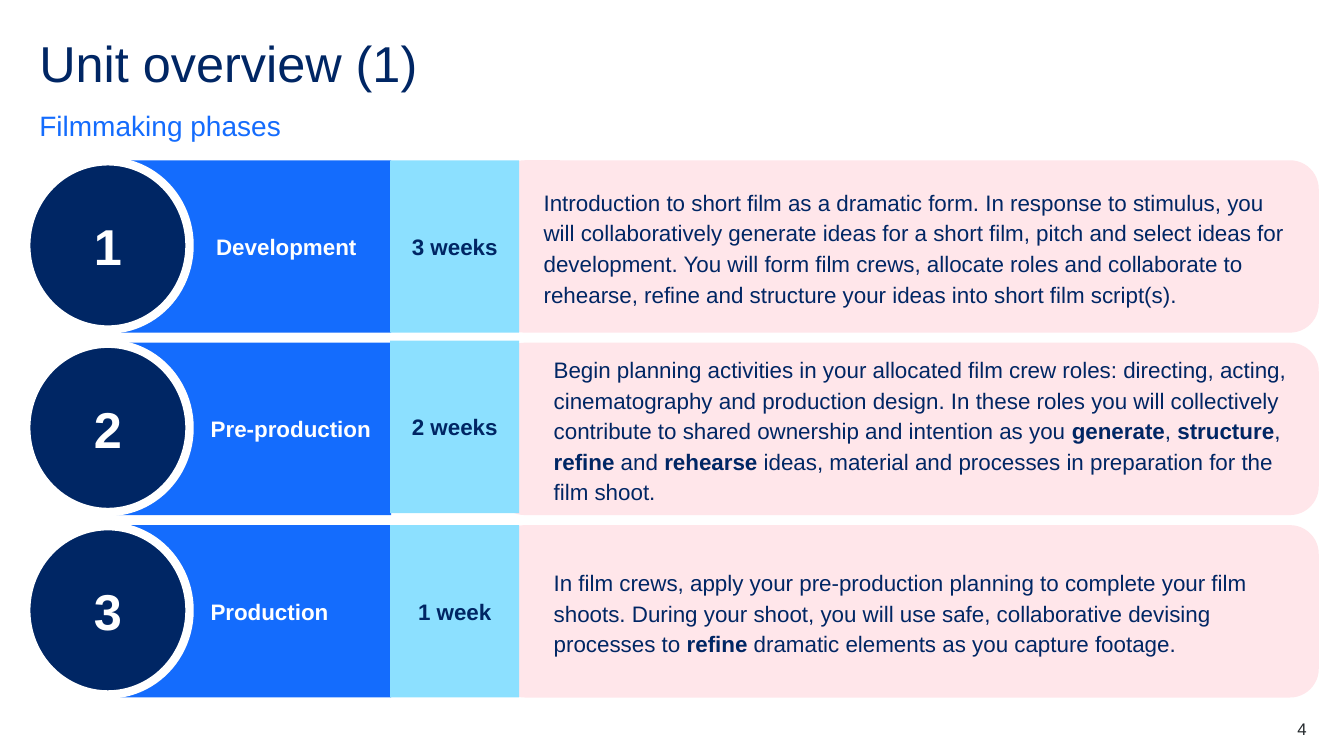
import pptx
import pptx.util
import pptx.dml.color
import pptx.enum.shapes
import pptx.enum.text

RGB = pptx.dml.color.RGBColor
NAVY = RGB(0x00, 0x26, 0x64)
BLUE = RGB(0x14, 0x6C, 0xFD)
SKY = RGB(0x8C, 0xE0, 0xFF)
PINK = RGB(0xFF, 0xE6, 0xEA)
WHITE = RGB(0xFF, 0xFF, 0xFF)
INK = RGB(0x22, 0x27, 0x2B)

SHAPE = pptx.enum.shapes.MSO_SHAPE
ALIGN = pptx.enum.text.PP_ALIGN
ANCHOR = pptx.enum.text.MSO_ANCHOR
PX = 9144  # 100 px to the inch

# number, phase, phase alignment, phase indent, time, time shift, text indent, text
# (words between asterisks are bold)
PHASES = [
    ("1", "Development", ALIGN.CENTER, 69, "3 weeks", 0, 29,
     "Introduction to short film as a dramatic form. In response to stimulus, "
     "you will collaboratively generate ideas for a short film, pitch and "
     "select ideas for development. You will form film crews, allocate roles "
     "and collaborate to rehearse, refine and structure your ideas into short "
     "film script(s)."),
    ("2", "Pre-production", ALIGN.CENTER, 78, "2 weeks", -2, 39,
     "Begin planning activities in your allocated film crew roles: directing, "
     "acting, cinematography and production design. In these roles you will "
     "collectively contribute to shared ownership and intention as you "
     "*generate*, *structure*, *refine* and *rehearse* ideas, material and "
     "processes in preparation for the film shoot."),
    ("3", "Production", ALIGN.LEFT, 88, "1 week", 0, 39,
     "In film crews, apply your pre-production planning to complete your film "
     "shoots. During your shoot, you will use safe, collaborative devising "
     "processes to *refine* dramatic elements as you capture footage."),
]


def px(*nums):
    return [pptx.util.Emu(n * PX) for n in nums]


def write(shape, text, size=16, color=NAVY, bold=False, align=ALIGN.LEFT,
          anchor=ANCHOR.MIDDLE, indent=0, line=None, after=0, inset=None):
    frame = shape.text_frame
    frame.word_wrap = True
    frame.vertical_anchor = anchor
    if inset is not None:
        frame.margin_left = frame.margin_right = inset
        frame.margin_top = frame.margin_bottom = inset
    para = frame.paragraphs[0]
    para.alignment = align
    para.space_after = pptx.util.Pt(after)
    if line:
        para.line_spacing = line
    if indent:
        props = para._p.get_or_add_pPr()
        props.set("marL", str(indent * PX))
        props.set("indent", "0")
    for i, part in enumerate(text.split("*")):
        run = para.add_run()
        run.text = part
        run.font.name = "Arial"
        run.font.size = pptx.util.Pt(size)
        run.font.bold = bold or i % 2 == 1
        run.font.color.rgb = color


def label(slide, box, text, **style):
    write(slide.shapes.add_textbox(*px(*box)), text, inset=0, **style)


def block(group, kind, box, fill, text, edge=None, **style):
    shape = group.shapes.add_shape(kind, *px(*box))
    shape.shadow.inherit = False
    shape.fill.solid()
    shape.fill.fore_color.rgb = fill
    if edge:
        shape.line.color.rgb = edge
        shape.line.width = pptx.util.Pt(6)
    else:
        shape.line.fill.background()
    write(shape, text, **style)


def header(slide, x, y, w):
    label(slide, (x, y, w, 60), "Unit overview (1)", size=36,
          anchor=ANCHOR.TOP, line=0.9)
    label(slide, (x, y + 68, w, 34), "Filmmaking phases", size=20, color=BLUE,
          anchor=ANCHOR.BOTTOM, line=1.5, after=12)


def phase(slide, x, y, h, data):
    num, name, align, indent, time, shift, inner, text = data
    group = slide.shapes.add_group_shape()
    # Description
    block(group, SHAPE.ROUNDED_RECTANGLE, (x + 466, y, 816, h), PINK, text,
          indent=inner, line=1.14, after=6)
    # Phase name
    block(group, SHAPE.RECTANGLE, (x + 85, y, 277, h), BLUE, name,
          color=WHITE, bold=True, align=align, indent=indent)
    # Number
    block(group, SHAPE.OVAL, (x, y + 1, 162, h - 4), NAVY, num, edge=WHITE,
          size=36, color=WHITE, bold=True, align=ALIGN.CENTER)
    # Duration
    block(group, SHAPE.RECTANGLE, (x + 361, y + shift, 128, h), SKY, time,
          bold=True, align=ALIGN.CENTER)


def main():
    deck = pptx.Presentation()
    deck.slide_width, deck.slide_height = px(1333, 750)
    slide = deck.slides.add_slide(deck.slide_layouts[6])
    header(slide, 39, 39, 1256)
    for i, data in enumerate(PHASES):
        phase(slide, 26, 159 + 181 * i, 171, data)
    # Page number
    label(slide, (1217, 713, 79, 20), "4", size=12, color=INK,
          align=ALIGN.RIGHT, anchor=ANCHOR.TOP)
    deck.save("out.pptx")


if __name__ == "__main__":
    main()
